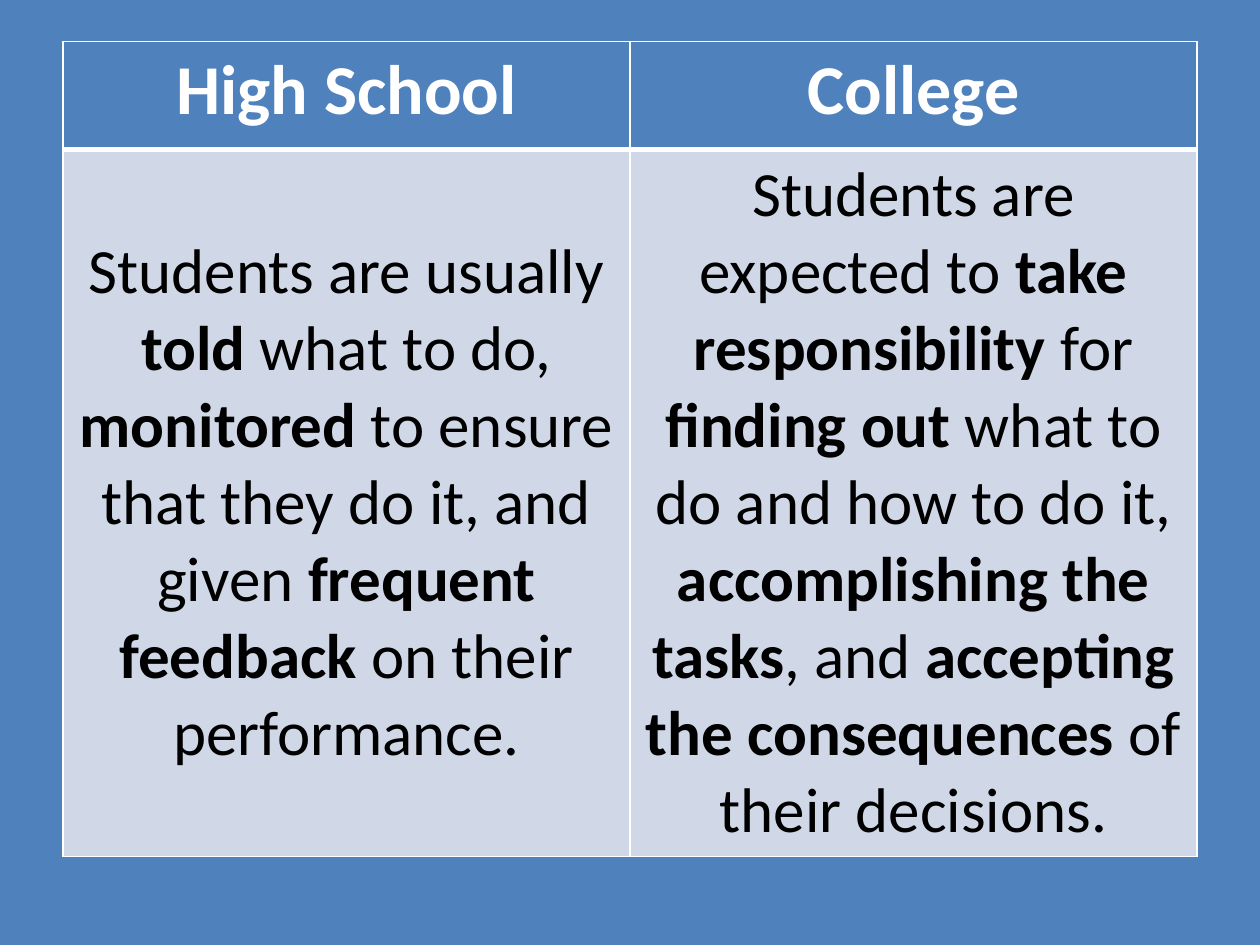
from lxml.etree import fromstring
from pptx import Presentation
from pptx.dml.color import RGBColor
from pptx.enum.text import MSO_ANCHOR, PP_ALIGN
from pptx.util import Cm, Pt

BLUE, PALE, WHITE, BLACK = "4F81BD", "D0D8E8", "FFFFFF", "000000"
FONT = "Calibri"
DRAWING_NS = "http://schemas.openxmlformats.org/drawingml/2006/main"

# Content: every cell is a list of (text, bold) runs
headings = [[("High School", True)], [("College", True)]]
expectations = [
    [
        ("Students are usually ", False),
        ("told", True),
        (" what to do, ", False),
        ("monitored", True),
        (" to ensure that they do it, and given ", False),
        ("frequent feedback ", True),
        ("on their performance.", False),
    ],
    [
        ("Students are expected to ", False),
        ("take responsibility ", True),
        ("for ", False),
        ("finding out ", True),
        ("what to do and how to do it, ", False),
        ("accomplishing the tasks", True),
        (", and ", False),
        ("accepting the consequences ", True),
        ("of their decisions.", False),
    ],
]
rows = [
    {"cells": headings, "height": 2.18, "size": 40, "color": WHITE,
     "fill": BLUE, "anchor": MSO_ANCHOR.TOP, "bottom": 3},
    {"cells": expectations, "height": 13.92, "size": 36, "color": BLACK,
     "fill": PALE, "anchor": MSO_ANCHOR.MIDDLE, "bottom": 1},
]
LEFT, TOP, COLUMN_WIDTH = 1.27, 0.84, 11.43


def rgb(hex_color):
    return RGBColor.from_string(hex_color)


def add_borders(cell, top, bottom):
    properties = cell._tc.get_or_add_tcPr()
    for index, (side, width) in enumerate(
            [("L", 1), ("R", 1), ("T", top), ("B", bottom)]):
        properties.insert(index, fromstring(
            f'<a:ln{side} xmlns:a="{DRAWING_NS}" w="{Pt(width)}">'
            f'<a:solidFill><a:srgbClr val="{WHITE}"/></a:solidFill>'
            f'</a:ln{side}>'))


def fill_cell(cell, runs, style, top):
    cell.fill.solid()
    cell.fill.fore_color.rgb = rgb(style["fill"])
    cell.vertical_anchor = style["anchor"]
    add_borders(cell, top, style["bottom"])
    paragraph = cell.text_frame.paragraphs[0]
    paragraph.alignment = PP_ALIGN.CENTER
    for text, bold in runs:
        run = paragraph.add_run()
        run.text = text
        run.font.name = FONT
        run.font.size = Pt(style["size"])
        run.font.bold = bold
        run.font.color.rgb = rgb(style["color"])


def main():
    prs = Presentation()
    prs.slide_width, prs.slide_height = Cm(25.4), Cm(19.05)
    slide = prs.slides.add_slide(prs.slide_layouts[6])
    slide.background.fill.solid()
    slide.background.fill.fore_color.rgb = rgb(BLUE)

    # Comparison table
    comparison = slide.shapes.add_table(
        len(rows), len(headings), Cm(LEFT), Cm(TOP),
        Cm(COLUMN_WIDTH * len(headings)),
        Cm(sum(row["height"] for row in rows))).table
    for column in comparison.columns:
        column.width = Cm(COLUMN_WIDTH)
    top = 1
    for r, row in enumerate(rows):
        comparison.rows[r].height = Cm(row["height"])
        for c, runs in enumerate(row["cells"]):
            fill_cell(comparison.cell(r, c), runs, row, top)
        top = row["bottom"]  # neighbouring rows share one border

    prs.save("out.pptx")


if __name__ == "__main__":
    main()
